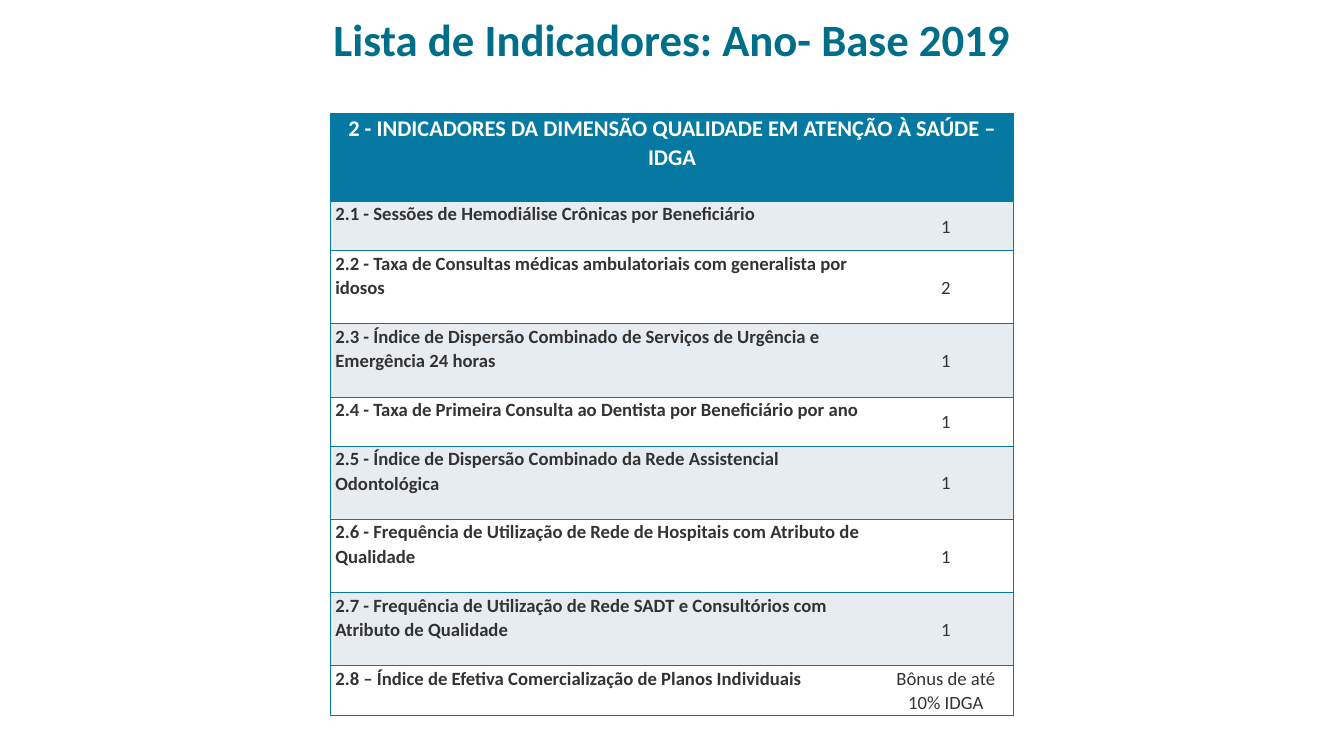
from dataclasses import dataclass

from lxml.etree import SubElement
from pptx import Presentation
from pptx.dml.color import RGBColor
from pptx.enum.text import MSO_ANCHOR, PP_ALIGN
from pptx.oxml.ns import qn
from pptx.util import Inches, Pt


@dataclass(frozen=True)
class Theme:
    font: str = "Calibri"
    title: str = "006E89"
    accent: str = "0679A3"
    band: str = "E7ECF0"
    white: str = "FFFFFF"
    ink: str = "333333"
    title_size: int = 48
    header_size: int = 24
    body_size: int = 20


theme = Theme()


def write(paragraph, text, size, color, bold, align):
    paragraph.text = text
    paragraph.alignment = align
    paragraph.font.name = theme.font
    paragraph.font.size = Pt(size)
    paragraph.font.bold = bold
    paragraph.font.color.rgb = RGBColor.from_string(color)


def style_cell(cell, fill, anchor, sides):
    cell.margin_left = cell.margin_right = Inches(0.07)
    cell.margin_top = cell.margin_bottom = 0
    cell.vertical_anchor = anchor
    properties = cell._tc.get_or_add_tcPr()
    for side in "LRTB":
        line = SubElement(properties, qn(f"a:ln{side}"), w=str(Pt(1)))
        if side in sides:
            solid = SubElement(line, qn("a:solidFill"))
            SubElement(solid, qn("a:srgbClr"), val=theme.accent)
        else:
            SubElement(line, qn("a:noFill"))
    cell.fill.solid()
    cell.fill.fore_color.rgb = RGBColor.from_string(fill)


short, tall = 0.73, 1.09
indicators = [
    ("2.1 - Sessões de Hemodiálise Crônicas por Beneficiário", "1", short),
    ("2.2 - Taxa de Consultas médicas ambulatoriais com generalista por idosos", "2", tall),
    ("2.3 - Índice de Dispersão Combinado de Serviços de Urgência e Emergência 24 horas", "1", tall),
    ("2.4 - Taxa de Primeira Consulta ao Dentista por Beneficiário por ano", "1", short),
    ("2.5 - Índice de Dispersão Combinado da Rede Assistencial Odontológica", "1", tall),
    ("2.6 - Frequência de Utilização de Rede de Hospitais com Atributo de Qualidade", "1", tall),
    ("2.7 - Frequência de Utilização de Rede SADT e Consultórios com Atributo de Qualidade", "1", tall),
    ("2.8 – Índice de Efetiva Comercialização de Planos Individuais", "Bônus de até 10% IDGA", short),
]
heights = [1.31] + [height for _, _, height in indicators]

presentation = Presentation()
presentation.slide_width = Inches(20)
presentation.slide_height = Inches(11.25)
slide = presentation.slides.add_slide(presentation.slide_layouts[6])

title = slide.shapes.add_textbox(0, Inches(0.11), Inches(20), Inches(0.87)).text_frame
title.word_wrap = True
title.margin_left = title.margin_right = Inches(0.15)
title.margin_top = title.margin_bottom = Inches(0.07)
write(title.paragraphs[0], "Lista de Indicadores: Ano- Base 2019",
      theme.title_size, theme.title, True, PP_ALIGN.CENTER)

table = slide.shapes.add_table(
    len(heights), 2, Inches(4.92), Inches(1.69), Inches(10.16), Inches(sum(heights))
).table
for column, width in zip(table.columns, (8.15, 2.01)):
    column.width = Inches(width)
for row, height in zip(table.rows, heights):
    row.height = Inches(height)

header = table.cell(0, 0)
header.merge(table.cell(0, 1))
for cell in table.rows[0].cells:
    style_cell(cell, theme.accent, MSO_ANCHOR.TOP, "LRTB")
heading = header.text_frame.paragraphs[0]
write(heading, "2 - INDICADORES DA DIMENSÃO QUALIDADE EM ATENÇÃO À SAÚDE – IDGA",
      theme.header_size, theme.white, True, PP_ALIGN.CENTER)
heading.line_spacing = 1.07

for number, (indicator, weight, _) in enumerate(indicators, start=1):
    fill = theme.band if number % 2 else theme.white
    columns = [
        (indicator, True, PP_ALIGN.LEFT, MSO_ANCHOR.TOP, "LTB"),
        (weight, False, PP_ALIGN.CENTER, MSO_ANCHOR.MIDDLE, "RTB"),
    ]
    for cell, (text, bold, align, anchor, sides) in zip(table.rows[number].cells, columns):
        style_cell(cell, fill, anchor, sides)
        paragraph = cell.text_frame.paragraphs[0]
        write(paragraph, text, theme.body_size, theme.ink, bold, align)
        paragraph.line_spacing = 1.07

presentation.save("out.pptx")
